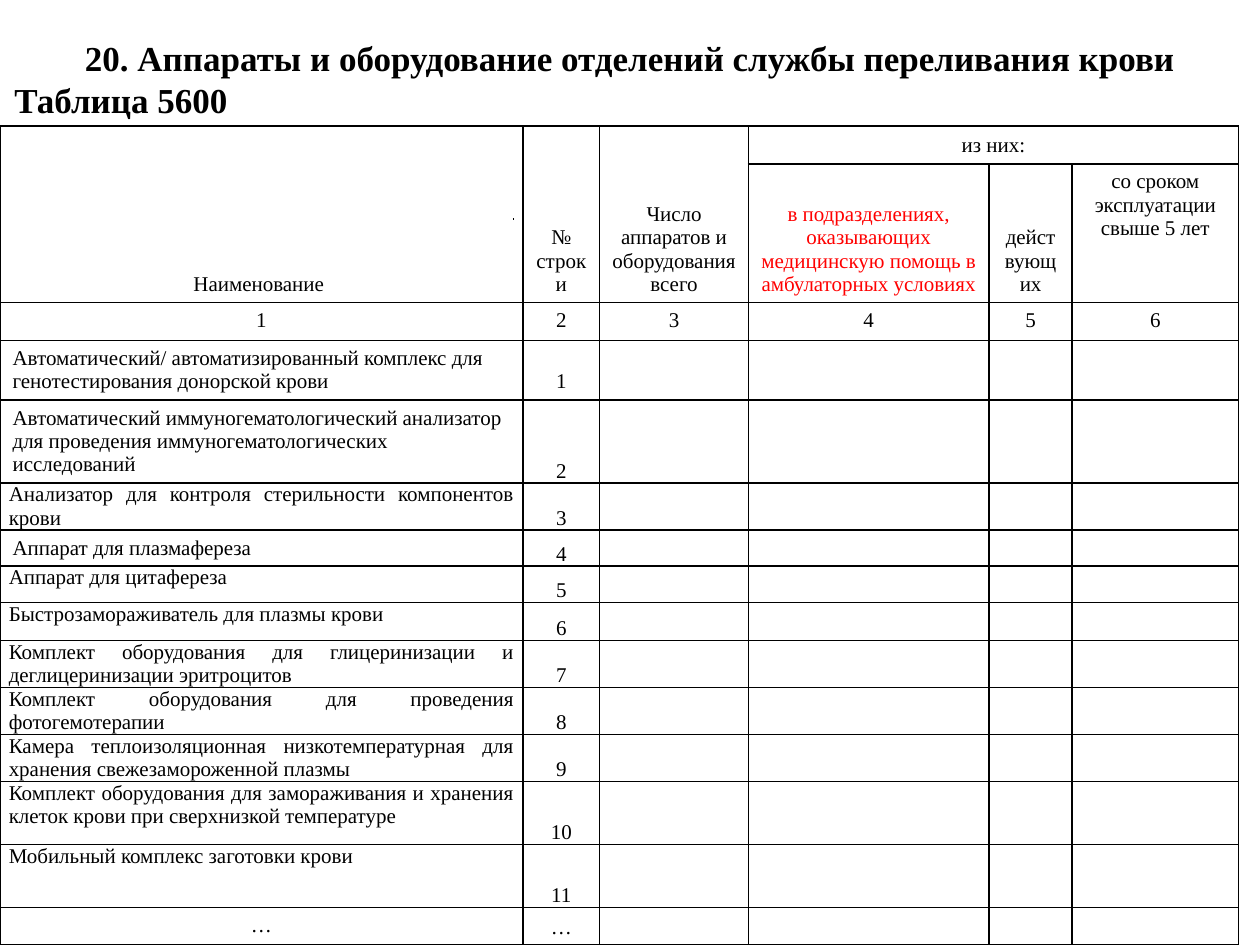
from lxml import etree
from pptx import Presentation
from pptx.dml.color import RGBColor
from pptx.enum.shapes import MSO_CONNECTOR
from pptx.enum.text import MSO_ANCHOR, PP_ALIGN
from pptx.oxml.ns import qn
from pptx.util import Inches, Pt

TOP, MIDDLE, BOTTOM = MSO_ANCHOR.TOP, MSO_ANCHOR.MIDDLE, MSO_ANCHOR.BOTTOM
LEFT, CENTER, JUSTIFY = PP_ALIGN.LEFT, PP_ALIGN.CENTER, PP_ALIGN.JUSTIFY
STRAIGHT = MSO_CONNECTOR.STRAIGHT

COLORS = {"ink": "000000", "accent": "FF0000"}
FONT = "Times New Roman"
WIDTH, HEIGHT = 10, 7.5
COLUMNS = [4.15, 0.61, 1.18, 1.91, 0.66, 1.32]
HEAD_ROWS = [0.3, 1.1, 0.3]
WIDE, TIGHT = (0.1, 0.05), (0.07, 0)  # side and top/bottom cell margins
NAME_SPACING = Pt(13.4)  # fixed line height keeps the rows on the page

# Row, column, text, anchor, colour of the header cells
HEADERS = [
    (0, 0, "Наименование ", BOTTOM, "ink"),
    (0, 1, "№ строки", BOTTOM, "ink"),
    (0, 2, "Число аппаратов и оборудования всего", BOTTOM, "ink"),
    (0, 3, "из них:", BOTTOM, "ink"),
    (1, 3, "в подразделениях, оказывающих медицинскую помощь в "
           "амбулаторных условиях", BOTTOM, "accent"),
    (1, 4, "действующих", BOTTOM, "ink"),
    (1, 5, "со сроком эксплуатации свыше 5 лет", TOP, "ink"),
]
MERGES = [(0, 0, 1, 0), (0, 1, 1, 1), (0, 2, 1, 2), (0, 3, 0, 5)]

# Height, name, alignment, name margins, number margins, number line spacing
EQUIPMENT = [
    (0.47, "Автоматический/ автоматизированный комплекс для генотестирования "
           "донорской крови", LEFT, WIDE, WIDE, None),
    (0.65, "Автоматический иммуногематологический анализатор для проведения "
           "иммуногематологических исследований", LEFT, WIDE, TIGHT, None),
    (0.37, "Анализатор для контроля стерильности компонентов крови",
     JUSTIFY, TIGHT, TIGHT, None),
    (0.28, "Аппарат для плазмафереза", LEFT, WIDE, TIGHT, Pt(11)),
    (0.29, "Аппарат для цитафереза", JUSTIFY, TIGHT, TIGHT, Pt(10)),
    (0.3, "Быстрозамораживатель для плазмы крови", JUSTIFY, TIGHT, TIGHT, None),
    (0.37, "Комплект оборудования для глицеринизации и деглицеринизации "
           "эритроцитов", JUSTIFY, TIGHT, TIGHT, None),
    (0.37, "Комплект оборудования для проведения фотогемотерапии",
     JUSTIFY, TIGHT, TIGHT, None),
    (0.37, "Камера теплоизоляционная низкотемпературная для хранения "
           "свежезамороженной плазмы", JUSTIFY, TIGHT, TIGHT, None),
    (0.5, "Комплект оборудования для замораживания и хранения клеток крови "
          "при сверхнизкой температуре", JUSTIFY, TIGHT, TIGHT, None),
    (0.5, "Мобильный комплекс заготовки крови", JUSTIFY, TIGHT, TIGHT, None),
    (0.3, "…", CENTER, WIDE, WIDE, None),
]


def set_all(target, values):
    for name, value in values.items():
        setattr(target, name, value)


def write(frame, text, size, align, color="ink", bold=False, spacing=None):
    para = frame.paragraphs[0]
    set_all(para, {"alignment": align, "line_spacing": spacing})
    span = para.add_run()
    span.text = text
    set_all(span.font, {"name": FONT, "size": Pt(size), "bold": bold})
    span.font.color.rgb = RGBColor.from_string(COLORS[color])


def add_heading(page, box, text):
    shape = page.shapes.add_textbox(*[Inches(part) for part in box])
    set_all(shape.text_frame, {"word_wrap": True, "vertical_anchor": MIDDLE})
    write(shape.text_frame, text, 20, CENTER, bold=True)


def add_point(page, x, y):
    x, y = Inches(x), Inches(y)
    point = page.shapes.add_connector(STRAIGHT, x, y, x + Inches(0.01), y)
    point.line.width = Pt(1)
    point.line.color.rgb = RGBColor.from_string(COLORS["ink"])
    etree.SubElement(point._element.spPr, qn("a:effectLst"))


def style_cell(cell):
    """Thin ruled border, no fill, and a small line height while empty."""
    properties = cell._tc.get_or_add_tcPr()
    for side in ("lnL", "lnR", "lnT", "lnB"):
        line = etree.SubElement(properties, qn("a:" + side), w=str(Pt(1)))
        fill = etree.SubElement(line, qn("a:solidFill"))
        etree.SubElement(fill, qn("a:srgbClr"), val=COLORS["ink"])
    cell.fill.background()
    set_margins(cell, TIGHT)
    para = cell.text_frame.paragraphs[0]
    ending = etree.SubElement(para._p, qn("a:endParaRPr"), sz="1200")
    for script in ("latin", "ea", "cs"):
        etree.SubElement(ending, qn("a:" + script), typeface=FONT)


def set_margins(cell, margins):
    side, edge = (Inches(part) for part in margins)
    set_all(cell, {"margin_left": side, "margin_right": side,
                   "margin_top": edge, "margin_bottom": edge})


def fill_cell(cell, text, align=CENTER, anchor=TOP, margins=WIDE,
              color="ink", spacing=None):
    set_margins(cell, margins)
    cell.vertical_anchor = anchor
    write(cell.text_frame, text, 12, align, color, spacing=spacing)


def add_equipment_table(page, left, top):
    rows = HEAD_ROWS + [item[0] for item in EQUIPMENT]
    table = page.shapes.add_table(
        len(rows), len(COLUMNS), Inches(left), Inches(top),
        Inches(sum(COLUMNS)), Inches(sum(rows))).table
    set_all(table, {"first_row": False, "horz_banding": False})
    for column, width in zip(table.columns, COLUMNS):
        column.width = Inches(width)
    for row, height in zip(table.rows, rows):
        row.height = Inches(height)
    for cell in table.iter_cells():
        style_cell(cell)

    # Header and column numbers
    for first_row, first_column, last_row, last_column in MERGES:
        table.cell(first_row, first_column).merge(
            table.cell(last_row, last_column))
    for row, column, text, anchor, color in HEADERS:
        fill_cell(table.cell(row, column), text, anchor=anchor, color=color)
    for column in range(len(COLUMNS)):
        fill_cell(table.cell(2, column), str(column + 1))

    # Equipment names and row numbers
    for number, item in enumerate(EQUIPMENT, 1):
        _, name, align, name_margins, number_margins, spacing = item
        row = len(HEAD_ROWS) + number - 1
        label = name if name == "…" else str(number)
        fill_cell(table.cell(row, 0), name, align, margins=name_margins,
                  spacing=NAME_SPACING)
        fill_cell(table.cell(row, 1), label, anchor=BOTTOM,
                  margins=number_margins, spacing=spacing)


def main():
    deck = Presentation()
    set_all(deck, {"slide_width": Inches(WIDTH), "slide_height": Inches(HEIGHT)})
    page = deck.slides.add_slide(deck.slide_layouts[6])
    add_heading(page, (0, 0.58, 1.92, 0.42), "Таблица 5600 ")
    add_point(page, 4.07, 1.74)
    add_heading(page, (0.25, 0.17, 0.95 * WIDTH, 0.58),
                "20. Аппараты и оборудование отделений службы переливания крови")
    add_equipment_table(page, 0, 1)
    deck.save("out.pptx")


if __name__ == "__main__":
    main()
